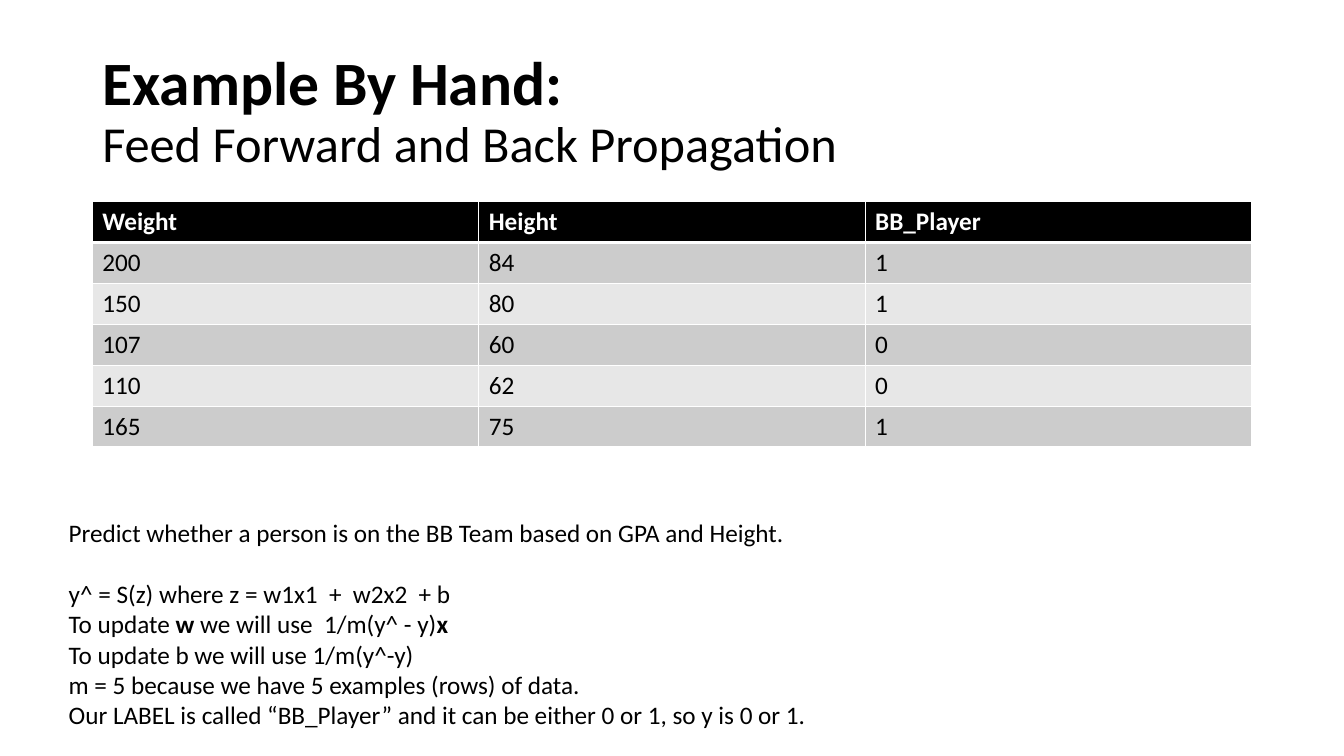
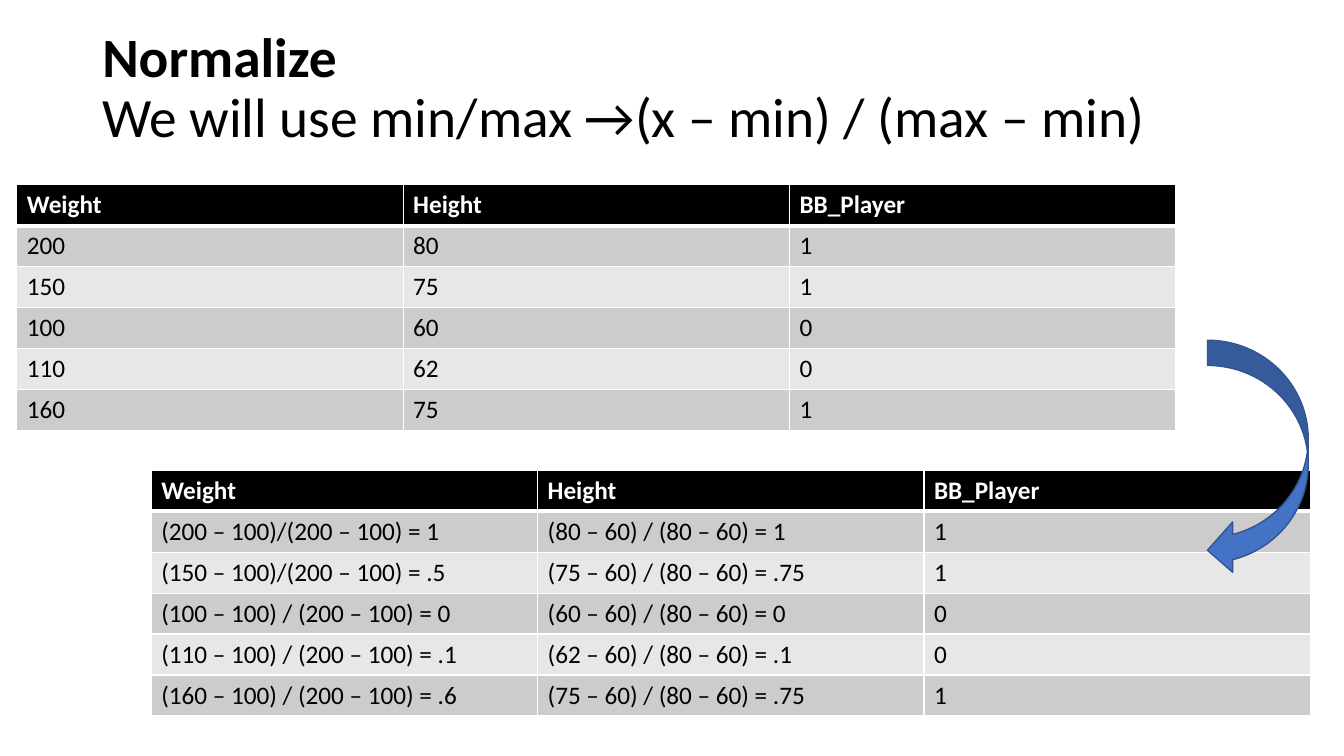
import pptx
import pptx.dml.color
import pptx.enum.shapes
import pptx.enum.text
import pptx.oxml
import pptx.oxml.ns
import pptx.util

EMU_PER_PX = 9525
SLIDE_SIZE = (1280, 720)
BLACK = pptx.dml.color.RGBColor(0x00, 0x00, 0x00)
WHITE = pptx.dml.color.RGBColor(0xFF, 0xFF, 0xFF)
DARK_BAND = pptx.dml.color.RGBColor(0xCC, 0xCC, 0xCC)
LIGHT_BAND = pptx.dml.color.RGBColor(0xE7, 0xE7, 0xE7)
ARROW_FILL = pptx.dml.color.RGBColor(0x44, 0x72, 0xC4)
ARROW_LINE = pptx.dml.color.RGBColor(0x32, 0x54, 0x91)

FONT_NAME = "Calibri"
BODY_SIZE = 18
ROW_HEIGHT = 39
TITLE_FRAME = {
    "word_wrap": True,
    "auto_size": pptx.enum.text.MSO_AUTO_SIZE.NONE,
    "vertical_anchor": pptx.enum.text.MSO_ANCHOR.MIDDLE,
}
NOTES_FRAME = {
    "word_wrap": False,
    "auto_size": pptx.enum.text.MSO_AUTO_SIZE.SHAPE_TO_FIT_TEXT,
}
HEADER = ("Weight", "Height", "BB_Player")

EXAMPLE_ROWS = [
    ("200", "84", "1"),
    ("150", "80", "1"),
    ("107", "60", "0"),
    ("110", "62", "0"),
    ("165", "75", "1"),
]
RAW_ROWS = [
    ("200", "80", "1"),
    ("150", "75", "1"),
    ("100", "60", "0"),
    ("110", "62", "0"),
    ("160", "75", "1"),
]
NORMALIZED_ROWS = [
    ("(200 – 100)/(200 – 100) = 1", "(80 – 60) / (80 – 60) = 1", "1"),
    ("(150 – 100)/(200 – 100) = .5", "(75 – 60) / (80 – 60) = .75", "1"),
    ("(100 – 100) / (200 – 100) = 0", "(60 – 60) / (80 – 60) = 0", "0"),
    ("(110 – 100) / (200 – 100) = .1", "(62 – 60) / (80 – 60) = .1", "0"),
    ("(160 – 100) / (200 – 100) = .6", "(75 – 60) / (80 – 60) = .75", "1"),
]
NOTES = [
    [("Predict whether a person is on the BB Team based on GPA and Height.", False)],
    [("y^ = S(z) where z = w1x1  +  w2x2  + b", False)],
    [("To update ", False), ("w", True), (" we will use  1/m(y^ - y)", False), ("x", True)],
    [("To update b we will use 1/m(y^-y)", False)],
    [("m = 5 because we have 5 examples (rows) of data.", False)],
    [("Our LABEL is called “BB_Player” and it can be either 0 or 1, so y is 0 or 1.", False)],
]
FORMULA_PARAGRAPH = 1


def px(length):
    return pptx.util.Emu(length * EMU_PER_PX)


def place(box):
    return [px(length) for length in box]


def apply_format(target, values):
    for name, value in values.items():
        setattr(target, name, value)


def add_run(paragraph, text, size, bold=False, color=BLACK):
    run = paragraph.add_run()
    run.text = text
    apply_format(run.font, {"name": FONT_NAME, "size": pptx.util.Pt(size), "bold": bold})
    run.font.color.rgb = color


def add_title(slide, box, heading, subtitle):
    frame = slide.shapes.add_textbox(*place(box)).text_frame
    apply_format(frame, TITLE_FRAME)
    paragraph = frame.paragraphs[0]
    paragraph.line_spacing = 0.9
    add_run(paragraph, *heading, bold=True)
    paragraph.add_line_break()
    add_run(paragraph, *subtitle)


def set_borders(cell, widths):
    properties = cell._tc.get_or_add_tcPr()
    for position, (side, width) in enumerate(widths.items()):
        line = pptx.oxml.parse_xml(
            f'<a:{side} {pptx.oxml.ns.nsdecls("a")} w="{pptx.util.Pt(width)}">'
            f'<a:solidFill><a:srgbClr val="{WHITE}"/></a:solidFill></a:{side}>'
        )
        properties.insert(position, line)


def add_data_table(slide, box, rows):
    lines = [HEADER, *rows]
    table = slide.shapes.add_table(len(lines), len(HEADER), *place(box)).table
    table.horz_banding = False
    for column in table.columns:
        column.width = px(box[2] // len(HEADER))
    for row_index, values in enumerate(lines):
        table.rows[row_index].height = px(ROW_HEIGHT)
        is_header = row_index == 0
        band = DARK_BAND if row_index % 2 else LIGHT_BAND
        widths = {
            "lnL": 1,
            "lnR": 1,
            "lnT": 3 if row_index == 1 else 1,
            "lnB": 3 if is_header else 1,
        }
        for column_index, value in enumerate(values):
            cell = table.cell(row_index, column_index)
            cell.fill.solid()
            cell.fill.fore_color.rgb = BLACK if is_header else band
            set_borders(cell, widths)
            add_run(cell.text_frame.paragraphs[0], value, BODY_SIZE,
                    is_header, WHITE if is_header else BLACK)


def add_notes_text(slide, box):
    frame = slide.shapes.add_textbox(*place(box)).text_frame
    apply_format(frame, NOTES_FRAME)
    for index, runs in enumerate(NOTES):
        paragraph = frame.add_paragraph() if index else frame.paragraphs[0]
        if index == FORMULA_PARAGRAPH:
            paragraph.space_before = pptx.util.Pt(22)
        for text, bold in runs:
            add_run(paragraph, text, BODY_SIZE, bold)


def add_curved_arrow(slide, box):
    arrow = slide.shapes.add_shape(
        pptx.enum.shapes.MSO_SHAPE.CURVED_LEFT_ARROW, *place(box))
    arrow.shadow.inherit = False
    arrow.fill.solid()
    arrow.fill.fore_color.rgb = ARROW_FILL
    arrow.line.color.rgb = ARROW_LINE
    arrow.line.width = pptx.util.Pt(1)


def build_example_slide(slide):
    add_title(slide, (88, 38, 1104, 139),
              ("Example By Hand: ", 44), ("Feed Forward and Back Propagation", 36))
    add_data_table(slide, (88, 192, 1104, 234), EXAMPLE_ROWS)
    add_notes_text(slide, (56, 488, 724, 213))


def build_normalize_slide(slide):
    add_title(slide, (88, 16, 1104, 139),
              ("Normalize", 39.6), ("We will use min/max →(x – min) / (max – min)", 39.6))
    add_data_table(slide, (16, 176, 1104, 234), RAW_ROWS)
    add_data_table(slide, (144, 448, 1104, 234), NORMALIZED_ROWS)
    add_curved_arrow(slide, (1150, 324, 96, 224))


def main():
    presentation = pptx.Presentation()
    width, height = place(SLIDE_SIZE)
    apply_format(presentation, {"slide_width": width, "slide_height": height})
    blank_layout = presentation.slide_layouts[6]
    for build_slide in (build_example_slide, build_normalize_slide):
        build_slide(presentation.slides.add_slide(blank_layout))
    presentation.save("out.pptx")


if __name__ == "__main__":
    main()
